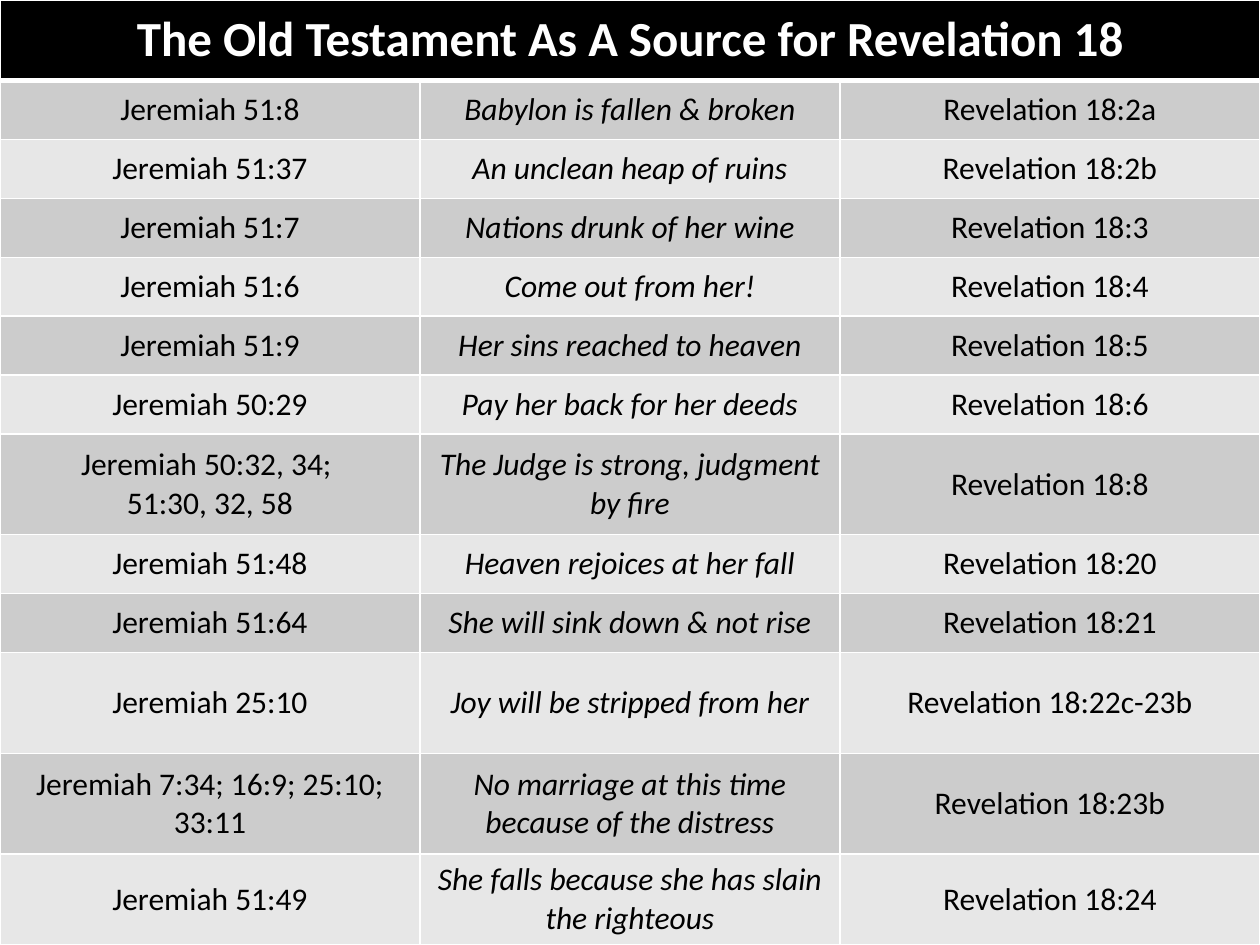
from dataclasses import dataclass

from lxml.etree import SubElement
from pptx import Presentation
from pptx.dml.color import RGBColor
from pptx.enum.text import MSO_VERTICAL_ANCHOR as Anchor, PP_PARAGRAPH_ALIGNMENT as Align
from pptx.oxml.ns import qn
from pptx.util import Inches, Pt


@dataclass(frozen=True)
class Theme:
    font: str = "Calibri"
    title_size: int = 28
    body_size: int = 18
    black: str = "000000"
    white: str = "FFFFFF"
    bands: tuple = ("CCCCCC", "E7E7E7")
    thin: int = 1
    thick: int = 3


THEME = Theme()
WIDTH, HEIGHT = 10, 7.5
TITLE_HEIGHT, TALL, LAST = 0.64, 0.8, 0.72
TALL_ROWS = (7, 10, 11)

TITLE = "The Old Testament As A Source for Revelation 18"
PARALLELS = [
    ("Jeremiah 51:8", "Babylon is fallen & broken", "Revelation 18:2a"),
    ("Jeremiah 51:37", "An unclean heap of ruins", "Revelation 18:2b"),
    ("Jeremiah 51:7", "Nations drunk of her wine", "Revelation 18:3"),
    ("Jeremiah 51:6", "Come out from her!", "Revelation 18:4"),
    ("Jeremiah 51:9", "Her sins reached to heaven", "Revelation 18:5"),
    ("Jeremiah 50:29", "Pay her back for her deeds", "Revelation 18:6"),
    ("Jeremiah 50:32, 34; \n51:30, 32, 58", "The Judge is strong, judgment by fire",
     "Revelation 18:8"),
    ("Jeremiah 51:48", "Heaven rejoices at her fall", "Revelation 18:20"),
    ("Jeremiah 51:64", "She will sink down & not rise", "Revelation 18:21"),
    ("Jeremiah 25:10", "Joy will be stripped from her", "Revelation 18:22c-23b"),
    ("Jeremiah 7:34; 16:9; 25:10; 33:11",
     "No marriage at this time because of the distress", "Revelation 18:23b"),
    ("Jeremiah 51:49", "She falls because she has slain the righteous", "Revelation 18:24"),
]


def row_heights():
    """Single-line rows share the height left by the title and the taller rows."""
    count = len(PARALLELS)
    single_count = count - len(TALL_ROWS) - 1
    single = (HEIGHT - TITLE_HEIGHT - TALL * len(TALL_ROWS) - LAST) / single_count
    body = [TALL if row in TALL_ROWS else single for row in range(1, count)]
    return [TITLE_HEIGHT, *body, LAST]


def set_borders(cell, top, bottom):
    props = cell._tc.get_or_add_tcPr()
    widths = {"L": THEME.thin, "R": THEME.thin, "T": top, "B": bottom}
    for index, (side, width) in enumerate(widths.items()):
        line = SubElement(props, qn(f"a:ln{side}"), w=str(Pt(width)))
        fill = SubElement(line, qn("a:solidFill"))
        SubElement(fill, qn("a:srgbClr"), val=THEME.white)
        props.insert(index, line)  # borders precede the fill


def fill_cell(cell, fill):
    cell.fill.solid()
    cell.fill.fore_color.rgb = RGBColor.from_string(fill)


def write_cell(cell, text, size, color, bold=False, italic=False):
    cell.vertical_anchor = Anchor.MIDDLE
    para = cell.text_frame.paragraphs[0]
    para.text = text.replace("\n", "\v")
    para.alignment = Align.CENTER
    font = para.font
    font.name, font.size = THEME.font, Pt(size)
    font.bold, font.italic = bold, italic
    font.color.rgb = RGBColor.from_string(color)


def add_parallels_table(page):
    heights = row_heights()
    columns = len(PARALLELS[0])
    table = page.shapes.add_table(len(heights), columns, 0, 0,
                                  Inches(WIDTH), Inches(HEIGHT)).table
    table.horz_banding = False
    for column in table.columns:
        column.width = Inches(WIDTH / columns)
    for row, height in zip(table.rows, heights):
        row.height = Inches(height)

    # Title row across all columns
    for cell in table.rows[0].cells:
        fill_cell(cell, THEME.black)
        set_borders(cell, THEME.thin, THEME.thick)
    table.cell(0, 0).merge(table.cell(0, columns - 1))
    write_cell(table.cell(0, 0), TITLE, THEME.title_size, THEME.white, bold=True)

    # Banded rows: source, theme in italics, parallel
    for index, texts in enumerate(PARALLELS):
        for column, text in enumerate(texts):
            cell = table.cell(index + 1, column)
            fill_cell(cell, THEME.bands[index % 2])
            set_borders(cell, THEME.thick if index == 0 else THEME.thin, THEME.thin)
            write_cell(cell, text, THEME.body_size, THEME.black, italic=column == 1)


def main():
    deck = Presentation()
    deck.slide_width, deck.slide_height = Inches(WIDTH), Inches(HEIGHT)
    page = deck.slides.add_slide(deck.slide_layouts[6])
    page.background.fill.solid()
    page.background.fill.fore_color.rgb = RGBColor.from_string(THEME.black)
    add_parallels_table(page)
    deck.save("out.pptx")


if __name__ == "__main__":
    main()
